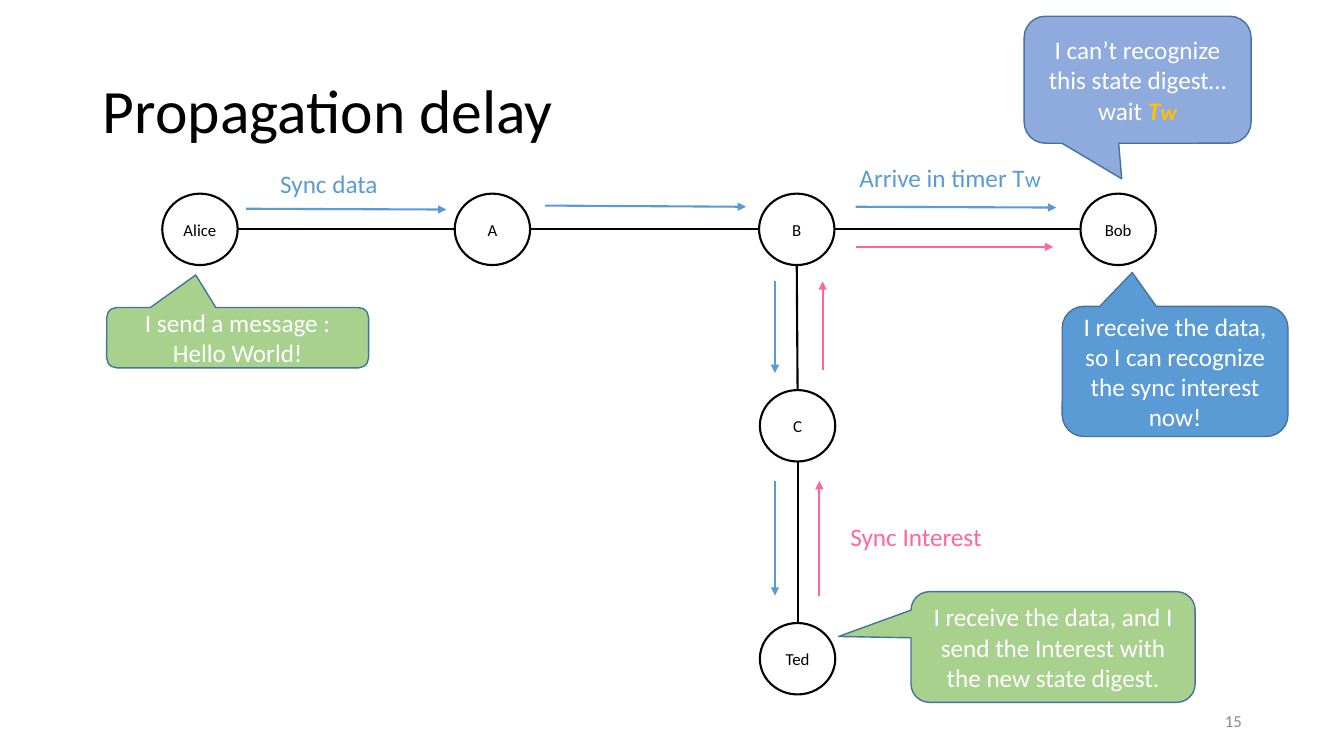
from lxml import etree
from pptx import Presentation
from pptx.dml.color import RGBColor
from pptx.enum.shapes import MSO_CONNECTOR, MSO_SHAPE
from pptx.enum.text import MSO_ANCHOR, PP_ALIGN
from pptx.oxml.ns import qn
from pptx.util import Cm, Pt

STRAIGHT = MSO_CONNECTOR.STRAIGHT
OVAL = MSO_SHAPE.OVAL
CALLOUT = MSO_SHAPE.ROUNDED_RECTANGULAR_CALLOUT
TOP, MIDDLE = MSO_ANCHOR.TOP, MSO_ANCHOR.MIDDLE
LEFT, CENTER, RIGHT = PP_ALIGN.LEFT, PP_ALIGN.CENTER, PP_ALIGN.RIGHT

BLACK, WHITE, GRAY = "000000", "FFFFFF", "8C8C8C"
BLUE, PINK, GREEN = "5B9BD5", "FF6699", "A9D18E"
PERIWINKLE, OUTLINE, GOLD = "8FAADC", "43739E", "FFC000"

NODE_WIDTH, NODE_HEIGHT = 1.9, 1.8


def paint(color_format, color):
    color_format.rgb = RGBColor.from_string(color)


def write(frame, paragraphs, size=18, color=BLACK, align=LEFT, anchor=TOP):
    frame.word_wrap = True
    frame.vertical_anchor = anchor
    for index, spans in enumerate(paragraphs):
        para = frame.add_paragraph() if index else frame.paragraphs[0]
        para.alignment = align
        for text, changes in spans:
            span = para.add_run()
            span.text = text
            font = span.font
            font.name = SlideBuilder.font
            font.size = Pt(changes.get("size", size))
            font.bold = font.italic = changes.get("strong")
            paint(font.color, changes.get("color", color))


def plain(text):
    return [[(text, {})]]


class SlideBuilder:
    font = "Calibri"
    line_width = Pt(1.5)

    def __init__(self, deck):
        self.page = deck.slides.add_slide(deck.slide_layouts[5])

    def title(self, text, left, top, width, height):
        box = self.page.shapes.title
        box.left, box.top, box.width, box.height = map(Cm, (left, top, width, height))
        write(box.text_frame, plain(text), size=44, anchor=MIDDLE)
        box.text_frame.paragraphs[0].line_spacing = 0.9

    def label(self, paragraphs, left, top, width, **style):
        box = self.page.shapes.add_textbox(Cm(left), Cm(top), Cm(width), Cm(1.02))
        write(box.text_frame, paragraphs, **style)

    def shape(self, kind, left, top, width, height, line, line_width):
        shape = self.page.shapes.add_shape(
            kind, Cm(left), Cm(top), Cm(width), Cm(height))
        shape.shadow.inherit = False
        paint(shape.line.color, line)
        shape.line.width = line_width
        return shape

    def node(self, name, x, y):
        oval = self.shape(OVAL, x - NODE_WIDTH / 2, y - NODE_HEIGHT / 2,
                          NODE_WIDTH, NODE_HEIGHT, BLACK, self.line_width)
        oval.fill.background()
        write(oval.text_frame, plain(name), size=12, align=CENTER, anchor=MIDDLE)

    def callout(self, paragraphs, area, pointer, fill):
        bubble = self.shape(CALLOUT, *area, OUTLINE, Pt(1))
        bubble.adjustments[0], bubble.adjustments[1] = pointer
        bubble.adjustments[2] = 0.167
        bubble.fill.solid()
        paint(bubble.fill.fore_color, fill)
        write(bubble.text_frame, paragraphs, color=WHITE, align=CENTER, anchor=MIDDLE)

    def line(self, start, end, color=BLACK, arrow=False):
        line = self.page.shapes.add_connector(STRAIGHT, *map(Cm, (*start, *end)))
        paint(line.line.color, color)
        line.line.width = self.line_width
        properties = line._element.spPr
        if arrow:
            outline = properties.find(qn("a:ln"))
            etree.SubElement(outline, qn("a:tailEnd"), type="triangle")
        etree.SubElement(properties, qn("a:effectLst"))


def main():
    deck = Presentation()
    deck.slide_width, deck.slide_height = Cm(33.87), Cm(19.05)
    slide = SlideBuilder(deck)
    slide.title("Propagation delay", 2.34, 1.02, 29.21, 3.68)
    slide.label(plain("15"), 23.93, 17.65, 7.62,
                size=12, color=GRAY, align=RIGHT, anchor=MIDDLE)

    nodes = {"Alice": (5.04, 5.78), "A": (12.41, 5.78), "B": (20.08, 5.78),
             "Bob": (28.18, 5.78), "C": (20.1, 10.73), "Ted": (20.1, 16.6)}
    for name, (x, y) in nodes.items():
        slide.node(name, x, y)

    for first, second in (("Alice", "A"), ("A", "B"), ("B", "Bob")):
        (x1, y1), (x2, y2) = nodes[first], nodes[second]
        slide.line((x1 + NODE_WIDTH / 2, y1), (x2 - NODE_WIDTH / 2, y2))
    for upper, lower in (("B", "C"), ("C", "Ted")):
        (x1, y1), (x2, y2) = nodes[upper], nodes[lower]
        slide.line((x1, y1 + NODE_HEIGHT / 2), (x2, y2 - NODE_HEIGHT / 2))

    data_arrows = [((6.2, 5.26), (11.25, 5.28)), ((13.74, 5.18), (18.8, 5.21)),
                   ((21.56, 5.21), (26.62, 5.23)), ((19.53, 7.09), (19.53, 9.4)),
                   ((19.53, 12.12), (19.53, 15.01))]
    interest_arrows = [((20.65, 15.01), (20.65, 12.12)),
                       ((20.73, 9.32), (20.73, 7.09)),
                       ((21.56, 6.22), (26.54, 6.22))]
    for color, arrows in ((BLUE, data_arrows), (PINK, interest_arrows)):
        for start, end in arrows:
            slide.line(start, end, color, arrow=True)

    slide.label(plain("Sync data"), 6.81, 4.11, 3.38, color=BLUE)
    slide.label(plain("Sync Interest"), 21.18, 13, 4.19, color=PINK)
    slide.label([[("Arrive in timer T", {}), ("w", {"size": 16})]],
                21.41, 3.96, 5.51, color=BLUE)

    timer = {"color": GOLD, "strong": True}
    slide.callout(plain("I send a message : Hello World!"),
                  (2.69, 7.75, 6.6, 1.52), (-0.16, -1.04), GREEN)
    slide.callout(plain("I receive the data, and I send the Interest "
                        "with the new state digest."),
                  (22.96, 14.91, 7.16, 2.79), (-0.755, -0.095), GREEN)
    slide.callout([[("I can’t recognize this state digest…", {})],
                   [("wait ", {}), ("T", timer), ("w", {**timer, "size": 16})]],
                  (25.81, 0.41, 5.72, 3.2), (-0.07, 0.78), PERIWINKLE)
    slide.callout(plain("I receive the data, so I can recognize "
                        "the sync interest now!"),
                  (26.77, 7.72, 5.69, 3.28), (-0.19, -0.76), BLUE)
    deck.save("out.pptx")


if __name__ == "__main__":
    main()
